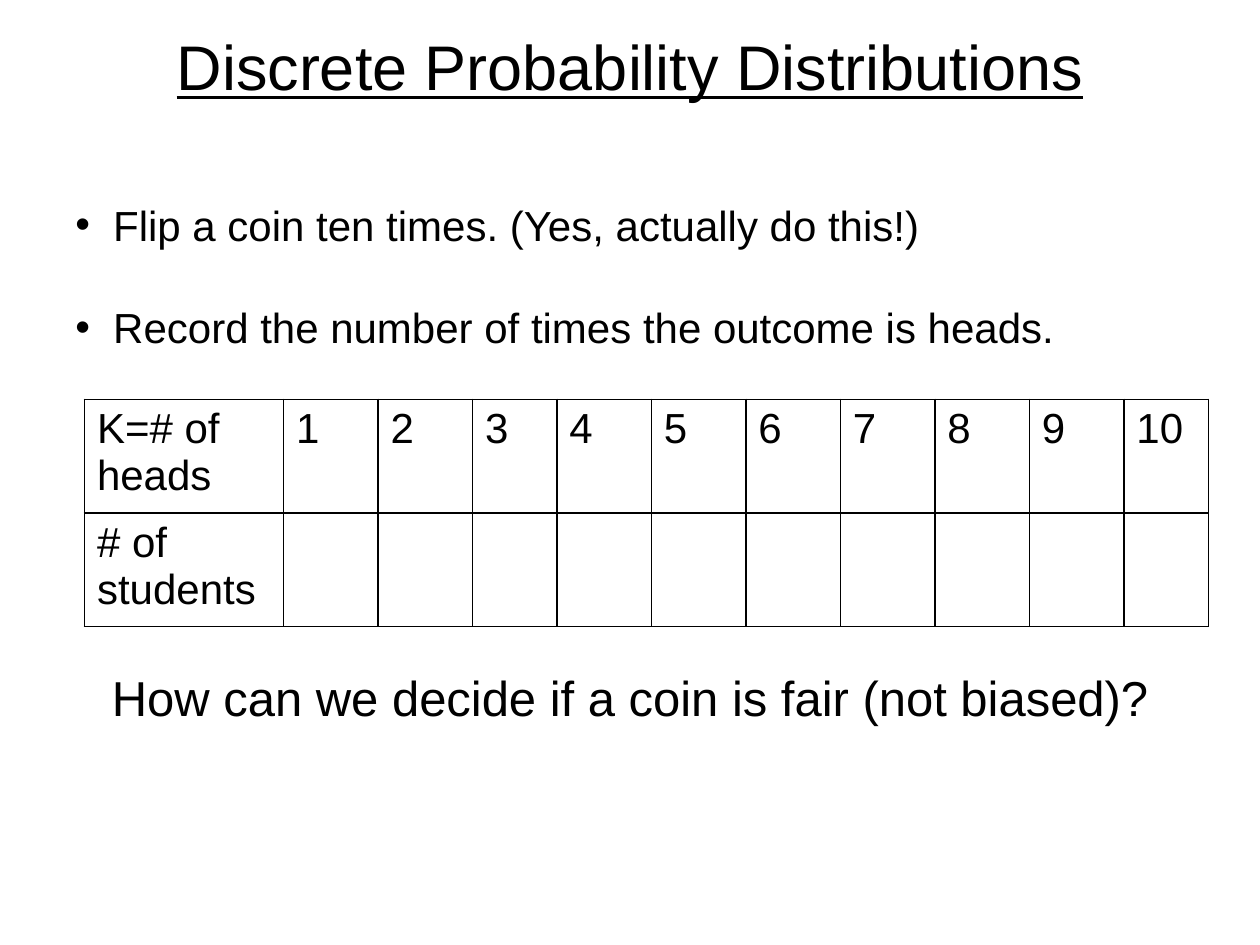
from lxml import etree
from pptx import Presentation
from pptx.dml.color import RGBColor
from pptx.enum.text import PP_ALIGN
from pptx.oxml.ns import qn
from pptx.util import Inches, Pt

LEFT, CENTER = PP_ALIGN.LEFT, PP_ALIGN.CENTER

TITLE = ["Discrete Probability Distributions"]
STEPS = [
    "Flip a coin ten times. (Yes, actually do this!)",
    "Record the number of times the outcome is heads.",
]
QUESTION = ["How can we decide if a coin is fair (not biased)?"]
ROWS = [
    ["K=# of heads"] + [str(k) for k in range(1, 11)],
    ["# of students"] + [""] * 10,
]

W, H = 10, 7.5
THEME = {
    "font": "Arial", "ink": "000000", "paper": "FFFFFF",
    "title": 36, "body": 24, "question": 28,
    "border": 1, "gap": 30, "indent": 0.3,
}
LABEL_COL, COL, NARROW_COL = 1.58, 0.75, 0.67
NARROW = {3, 10}
ROW_H = 0.9
TABLE_AT = (0.67, 3.17)

BOXES = [
    {"lines": STEPS, "at": (0.5, 1.5, 9.08, 1.31), "size": "body",
     "align": LEFT, "bullet": True, "inset": 0.08},
    {"lines": TITLE, "at": (0, 0.17, W, 0.71), "size": "title",
     "align": CENTER, "underline": True},
    {"lines": QUESTION, "at": (0, 0.7 * H, W, 0.57), "size": "question",
     "align": CENTER},
]


def write(p, text, size, underline=None):
    r = p.add_run()
    r.text = text
    fmt = {"name": THEME["font"], "size": Pt(THEME[size]), "underline": underline}
    for key, value in fmt.items():
        setattr(r.font, key, value)
    r.font.color.rgb = RGBColor.from_string(THEME["ink"])


def add_bullet(p):
    ppr = p._p.get_or_add_pPr()
    indent = Inches(THEME["indent"])
    ppr.set("marL", str(indent))
    ppr.set("indent", str(-indent))
    etree.SubElement(ppr, qn("a:buFont"), typeface=THEME["font"])
    etree.SubElement(ppr, qn("a:buChar"), char="•")


def add_text(slide, box):
    sp = slide.shapes.add_textbox(*map(Inches, box["at"]))
    tf = sp.text_frame
    tf.word_wrap = True
    tf.margin_top = Inches(box.get("inset", 0.05))
    for i, line in enumerate(box["lines"]):
        p = tf.add_paragraph() if i else tf.paragraphs[0]
        p.alignment = box["align"]
        if i:
            p.space_before = Pt(THEME["gap"])
        if box.get("bullet"):
            add_bullet(p)
        write(p, line, box["size"], box.get("underline"))


def add_borders(cell):
    tcpr = cell._tc.get_or_add_tcPr()
    for i, side in enumerate(("lnL", "lnR", "lnT", "lnB")):
        ln = etree.Element(qn(f"a:{side}"), w=str(Pt(THEME["border"])))
        fill = etree.SubElement(ln, qn("a:solidFill"))
        etree.SubElement(fill, qn("a:srgbClr"), val=THEME["ink"])
        tcpr.insert(i, ln)


def add_tally(slide):
    widths = [LABEL_COL] + [
        NARROW_COL if k in NARROW else COL for k in range(1, len(ROWS[0]))
    ]
    size = (sum(widths), ROW_H * len(ROWS))
    table = slide.shapes.add_table(
        len(ROWS), len(widths), *map(Inches, TABLE_AT + size)
    ).table
    for flag in ("first_row", "horz_banding"):
        setattr(table, flag, False)
    for col, width in zip(table.columns, widths):
        col.width = Inches(width)
    for i, row in enumerate(ROWS):
        table.rows[i].height = Inches(ROW_H)
        for j, text in enumerate(row):
            cell = table.cell(i, j)
            cell.fill.background()
            add_borders(cell)
            if text:
                write(cell.text_frame.paragraphs[0], text, "body")


def main():
    prs = Presentation()
    prs.slide_width, prs.slide_height = Inches(W), Inches(H)
    slide = prs.slides.add_slide(prs.slide_layouts[6])
    bg = slide.background.fill
    bg.solid()
    bg.fore_color.rgb = RGBColor.from_string(THEME["paper"])
    for box in BOXES:
        add_text(slide, box)
    add_tally(slide)
    prs.save("out.pptx")


if __name__ == "__main__":
    main()
